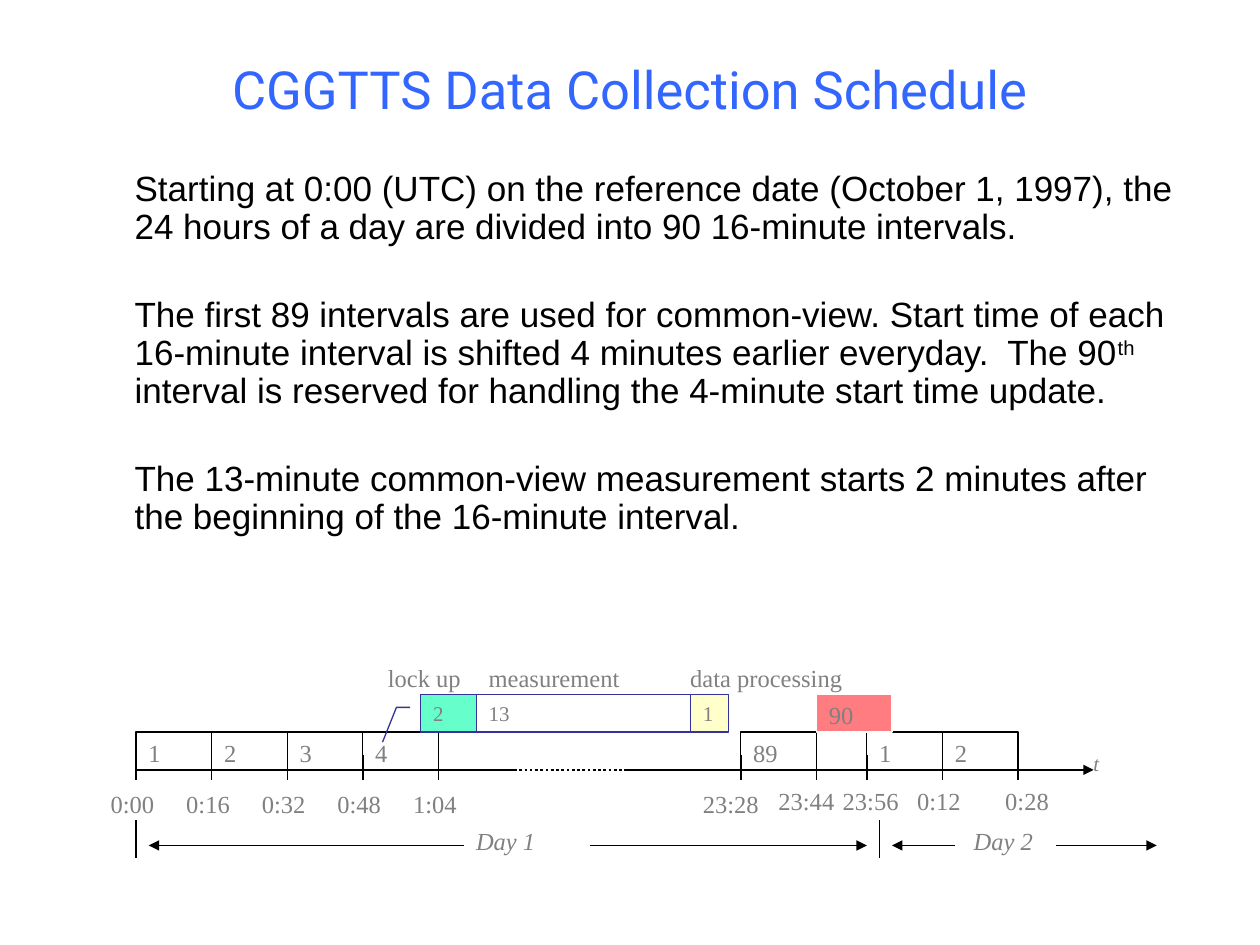
from pptx import Presentation
from pptx import util as u
from pptx.dml.color import RGBColor
from pptx.enum import dml, shapes, text
from pptx.oxml import parse_xml
from pptx.oxml.ns import nsdecls

PX = 9144  # EMU per px, 100 px to the inch

BLACK = RGBColor(0x00, 0x00, 0x00)
WHITE = RGBColor(0xFF, 0xFF, 0xFF)
GRAY = RGBColor(0x80, 0x80, 0x80)
TITLE_BLUE = RGBColor(0x33, 0x66, 0xFF)
NAVY = RGBColor(0x33, 0x33, 0x99)
RED = RGBColor(0xFF, 0x7C, 0x80)
YELLOW = RGBColor(0xFF, 0xFF, 0xCC)
GREEN = RGBColor(0x66, 0xFF, 0xCC)

prs = Presentation()
prs.slide_width, prs.slide_height = 1000 * PX, 750 * PX
s = prs.slides.add_slide(prs.slide_layouts[6])


def add_label(x, y, w, content, size=14, italic=False, border=None, fill=None,
              kind=shapes.MSO_SHAPE.RECTANGLE):
    """Add gray serif text: in a bordered shape if border is given, else in a text box."""
    frame = [v * PX for v in (x, y, w, 30)]
    if border is None:
        sp = s.shapes.add_textbox(*frame)
    else:
        sp = s.shapes.add_shape(kind, *frame)
        sp.shadow.inherit = False
        sp.line.color.rgb = border
        sp.line.width = u.Pt(0.75)
        if fill is None:
            sp.fill.background()
        else:
            sp.fill.solid()
            sp.fill.fore_color.rgb = fill
    tf = sp.text_frame
    tf.text = content
    tf.word_wrap = True
    tf.vertical_anchor = text.MSO_ANCHOR.TOP
    p = tf.paragraphs[0]
    p.alignment = text.PP_ALIGN.LEFT
    font = p.runs[0].font
    font.name, font.size, font.italic = "Times New Roman", u.Pt(size), italic
    font.color.rgb = GRAY
    return sp


def add_line(x1, y1, x2, y2, width=0.75, arrow=False):
    c = s.shapes.add_connector(shapes.MSO_CONNECTOR.STRAIGHT,
                               x1 * PX, y1 * PX, x2 * PX, y2 * PX)
    c.line.color.rgb = BLACK
    c.line.width = u.Pt(width)
    if arrow:
        c.line._get_or_add_ln().append(
            parse_xml(f'<a:tailEnd {nsdecls("a")} type="triangle"/>'))
    c._element.spPr.append(parse_xml(f'<a:effectLst {nsdecls("a")}/>'))
    return c


# Title
tf = s.shapes.add_textbox(0, 32 * PX, 1000 * PX, 76 * PX).text_frame
tf.word_wrap = True
tf.vertical_anchor = text.MSO_ANCHOR.MIDDLE
tf.text = "CGGTTS Data Collection Schedule"
p = tf.paragraphs[0]
p.alignment = text.PP_ALIGN.CENTER
font = p.runs[0].font
font.name, font.size = "Roboto", u.Pt(30)
font.color.rgb = TITLE_BLUE

# Explanation, as (text, superscript) runs
paragraphs = [
    [("Starting at 0:00 (UTC) on the reference date (October 1, 1997), the "
      "24 hours of a day are divided into 90 16-minute intervals.", False)],
    [("The first 89 intervals are used for common-view. Start time of each "
      "16-minute interval is shifted 4 minutes earlier everyday.  The 90", False),
     ("th ", True),
     ("interval is reserved for handling the 4-minute start time update.", False)],
    [("The 13-minute common-view measurement starts 2 minutes after "
      "the beginning of the 16-minute interval.", False)],
]
tf = s.shapes.add_textbox(97 * PX, 131 * PX, 864 * PX, 377 * PX).text_frame
tf.word_wrap = True
for i, runs in enumerate(paragraphs):
    p = tf.add_paragraph() if i else tf.paragraphs[0]
    p.line_spacing = 0.9
    p.space_before = u.Pt(29 if i else 0)
    for content, raised in runs:
        r = p.add_run()
        r.text = content
        r.font.name, r.font.size = "Arial", u.Pt(20)
        r.font.color.rgb = BLACK
        if raised:
            r.font._element.set("baseline", "30000")

# Intervals on the time axis
for x, number in [(108, "1"), (168, "2"), (228, "3"), (288, "4"),
                  (588, "89"), (688, "1"), (748, "2")]:
    add_label(x, 581, 60, number, border=BLACK)
add_label(648, 551, 60, "90", border=WHITE, fill=RED)

# Time axis
add_line(108, 611, 408, 611, 1.5)
add_line(408, 611, 498, 611, 1.5).line.dash_style = dml.MSO_LINE.ROUND_DOT
add_line(498, 611, 808, 611, 1.5)
add_line(808, 611, 868, 611, 1.5, arrow=True)
add_label(858, 591, 40, "t", 12, italic=True)

for x in (108, 168, 228, 288, 348, 588, 648, 688, 748, 808):
    add_line(x, 599, x, 619)
for x, y, w, time in [(78, 621, 60, "0:00"), (138, 621, 60, "0:16"),
                      (198, 621, 60, "0:32"), (258, 621, 60, "0:48"),
                      (318, 621, 60, "1:04"), (548, 621, 70, "23:28"),
                      (608, 619, 73, "23:44"), (659, 619, 73, "23:56"),
                      (718, 619, 60, "0:12"), (788, 619, 60, "0:28")]:
    add_label(x, y, w, time)

# Day spans
add_label(368, 651, 100, "Day 1", italic=True)
add_label(763, 651, 110, "Day 2", italic=True)
for x in (108, 698):
    add_line(x, 651, x, 681)
for start, end in [(368, 118), (468, 688), (758, 708), (838, 918)]:
    add_line(start, 671, end, 671, arrow=True)

# Phases of one interval
for x, w, phase in [(298, 80, "lock up"), (378, 170, "measurement"),
                    (538, 147, "data processing")]:
    add_label(x, 521, w, phase)
add_label(378, 551, 170, "13", 12, border=NAVY, fill=WHITE)
add_label(548, 551, 30, "1", 12, border=NAVY, fill=YELLOW)
callout = add_label(334, 551, 44, "2", 12, border=NAVY, fill=GREEN,
                    kind=shapes.MSO_SHAPE.LINE_CALLOUT_2)
callout._element.spPr.xfrm.set("flipH", "1")
for i, value in enumerate((0.35, 1.19, 0.35, 1.44, 1.27, 1.69)):
    callout.adjustments[i] = value

prs.save("out.pptx")
